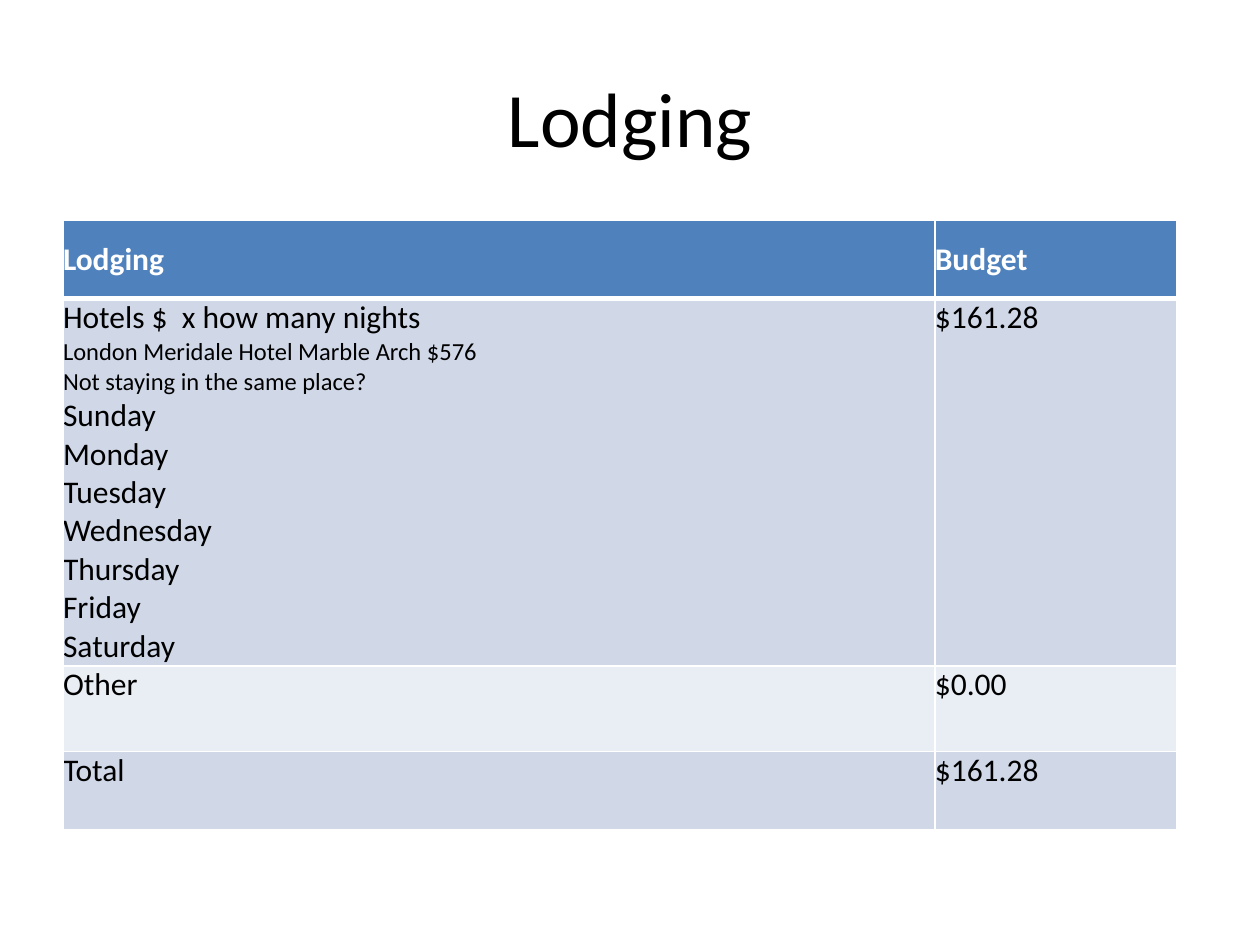
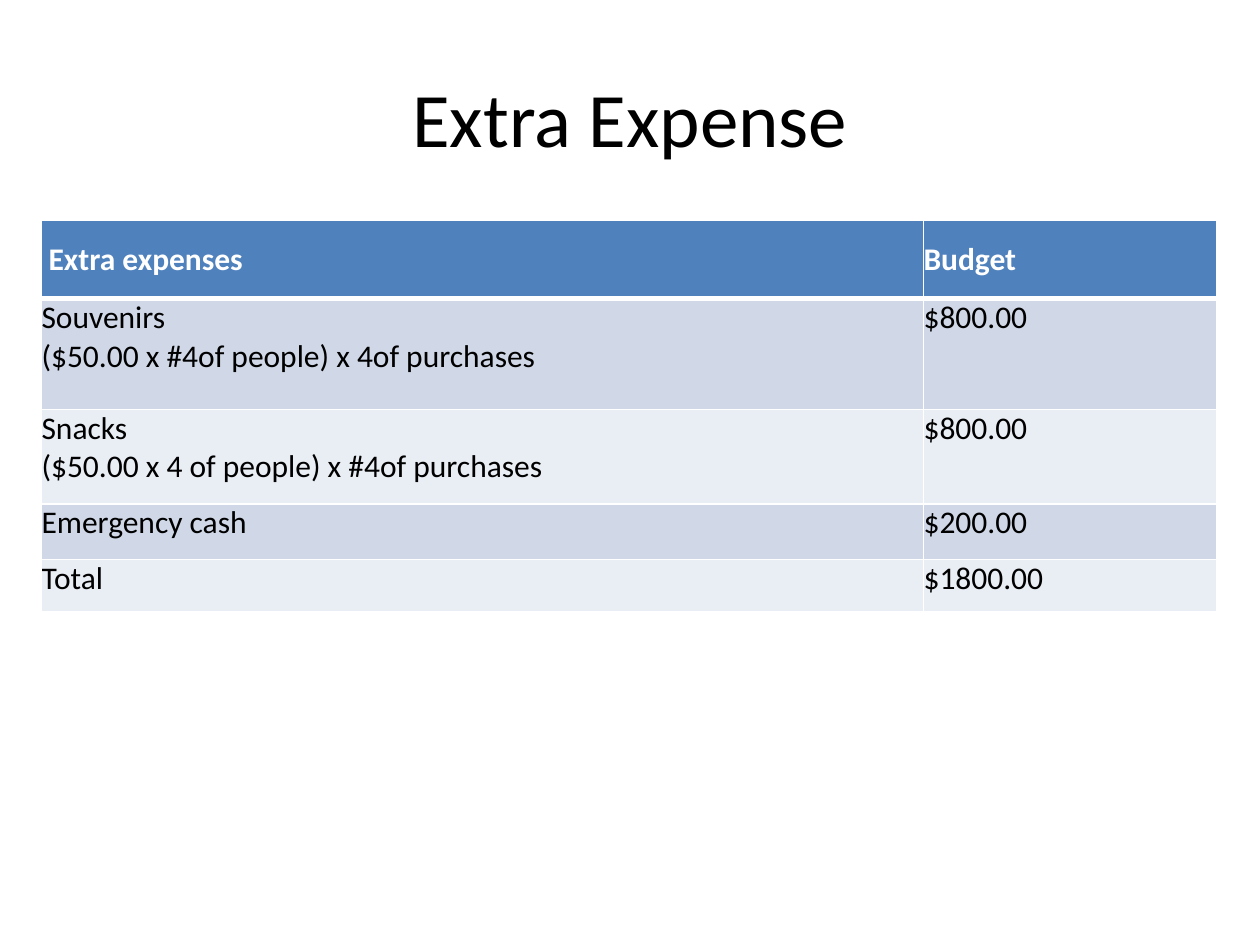
from lxml.etree import SubElement
from pptx import Presentation
from pptx.dml.color import RGBColor
from pptx.enum.text import MSO_ANCHOR, PP_ALIGN
from pptx.oxml.ns import qn
from pptx.util import Inches, Pt

# Shared style
FONT = "Calibri"
BLACK, WHITE = "000000", "FFFFFF"
HEADER_FILL = "4F81BD"
BAND_FILLS = ("D0D8E8", "E9EDF4")
TITLE_SIZE, BODY_SIZE, DETAIL_SIZE = 44, 18, 14
TABLE_TOP = 1.75

# Slide content: each cell is a list of lines
LODGING_DETAILS = ["London Meridale Hotel Marble Arch $576",
                   "Not staying in the same place?"]
DAYS = ["Sunday", "Monday", "Tuesday", "Wednesday",
        "Thursday", "Friday", "Saturday"]
LODGING_ROWS = [
    (["Lodging"], ["Budget"]),
    (["Hotels $  x how many nights", *LODGING_DETAILS, *DAYS], ["$161.28"]),
    (["Other"], ["$0.00"]),
    (["Total"], ["$161.28"]),
]
EXPENSE_ROWS = [
    ([" Extra expenses"], ["Budget"]),
    (["Souvenirs", "($50.00 x #4of people) x 4of purchases"], ["$800.00"]),
    (["Snacks", "($50.00 x 4 of people) x #4of purchases"], ["$800.00"]),
    (["Emergency cash"], ["$200.00"]),
    (["Total"], ["$1800.00"]),
]


def color(hex_string):
    return RGBColor.from_string(hex_string)


def style_font(paragraph, size, hex_color, bold=False):
    font = paragraph.font
    font.name, font.size, font.bold = FONT, Pt(size), bold
    font.color.rgb = color(hex_color)


def add_titled_slide(presentation, title_text):
    slide = presentation.slides.add_slide(presentation.slide_layouts[5])
    title = slide.shapes.title
    title.left, title.top = Inches(0.5), Inches(0.3)
    title.width, title.height = Inches(9), Inches(1.25)
    frame = title.text_frame
    frame.text = title_text
    frame.vertical_anchor = MSO_ANCHOR.MIDDLE
    paragraph = frame.paragraphs[0]
    paragraph.alignment = PP_ALIGN.CENTER
    style_font(paragraph, TITLE_SIZE, BLACK)
    return slide


def set_borders(cell, bottom_width):
    """Add white borders; call before the fill, which must follow them."""
    properties = cell._tc.get_or_add_tcPr()
    for side in "LRTB":
        width = bottom_width if side == "B" else 1
        line = SubElement(properties, qn(f"a:ln{side}"), w=str(Pt(width)))
        fill = SubElement(line, qn("a:solidFill"))
        SubElement(fill, qn("a:srgbClr"), val=WHITE)


def fill_cell(cell, lines, row_index):
    is_header = row_index == 0
    cell.margin_left = cell.margin_right = 0
    cell.margin_top = cell.margin_bottom = 0
    cell.vertical_anchor = MSO_ANCHOR.MIDDLE if is_header else MSO_ANCHOR.TOP
    set_borders(cell, bottom_width=3 if is_header else 1)
    cell.fill.solid()
    band = BAND_FILLS[(row_index - 1) % 2]
    cell.fill.fore_color.rgb = color(HEADER_FILL if is_header else band)

    cell.text = "\n".join(lines)
    for line, paragraph in zip(lines, cell.text_frame.paragraphs):
        size = DETAIL_SIZE if line in LODGING_DETAILS else BODY_SIZE
        style_font(paragraph, size, WHITE if is_header else BLACK, is_header)


def add_budget_table(slide, left, column_widths, row_heights, rows):
    table = slide.shapes.add_table(
        len(rows), len(column_widths), Inches(left), Inches(TABLE_TOP),
        Inches(sum(column_widths)), Inches(sum(row_heights))).table
    for column, width in zip(table.columns, column_widths):
        column.width = Inches(width)
    for row_index, (height, contents) in enumerate(zip(row_heights, rows)):
        table.rows[row_index].height = Inches(height)
        for column_index, lines in enumerate(contents):
            fill_cell(table.cell(row_index, column_index), lines, row_index)


def main():
    presentation = Presentation()
    presentation.slide_width = Inches(10)
    presentation.slide_height = Inches(7.5)

    # Lodging
    slide = add_titled_slide(presentation, "Lodging")
    add_budget_table(slide, 0.5, (6.92, 1.92), (0.62, 2.87, 0.68, 0.62),
                     LODGING_ROWS)

    # Extra expense
    slide = add_titled_slide(presentation, "Extra Expense")
    add_budget_table(slide, 0.33, (7, 2.33), (0.62, 0.88, 0.75, 0.44, 0.42),
                     EXPENSE_ROWS)

    presentation.save("out.pptx")


if __name__ == "__main__":
    main()
